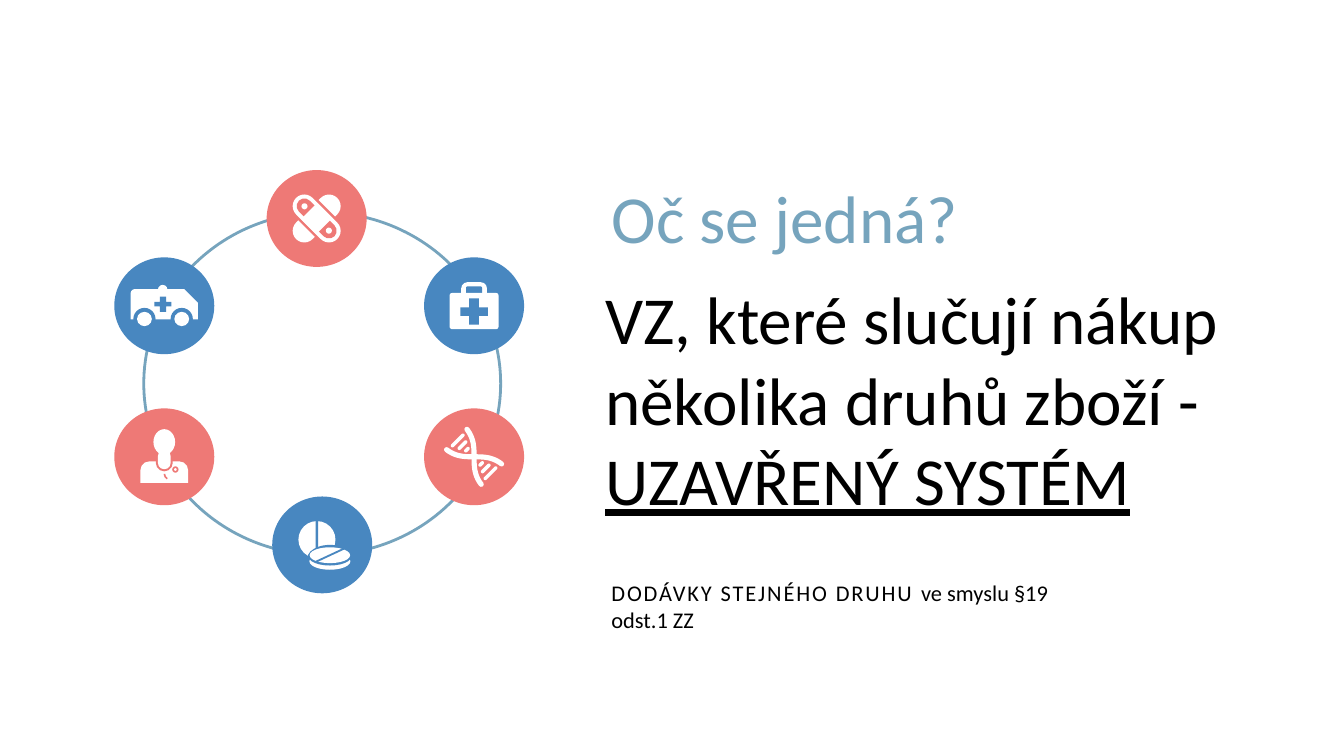
"""Build a slide with a ring of six medical icons beside a title and two texts."""
from pptx import Presentation
from pptx import util as u
from pptx.dml.color import RGBColor
from pptx.enum import shapes, text

STEEL = RGBColor(0x76, 0xA4, 0xBD)
BLUE = RGBColor(0x48, 0x87, 0xC0)
CORAL = RGBColor(0xEE, 0x79, 0x76)
WHITE = RGBColor(0xFF, 0xFF, 0xFF)
BLACK = RGBColor(0, 0, 0)
FONT = "Calibri"

OVAL = shapes.MSO_SHAPE.OVAL
BAR = shapes.MSO_SHAPE.RECTANGLE
ROUNDED = shapes.MSO_SHAPE.ROUNDED_RECTANGLE
CROSS = shapes.MSO_SHAPE.CROSS
VAN = shapes.MSO_SHAPE.SNIP_ROUND_RECTANGLE
SHOULDERS = shapes.MSO_SHAPE.ROUND_2_SAME_RECTANGLE
HALF_RING = shapes.MSO_SHAPE.BLOCK_ARC

deck = Presentation()
deck.slide_width, deck.slide_height = u.Cm(50.8), u.Cm(28.58)
page = deck.slides.add_slide(deck.slide_layouts[5])


def add_part(kind, center, offset, size, color, rotation=0, adjust=()):
    """Add a filled shape whose middle lies at an offset from an icon's center, in cm."""
    x, y = center[0] + offset[0], center[1] + offset[1]
    width, height = size
    part = page.shapes.add_shape(
        kind, u.Cm(x - width / 2), u.Cm(y - height / 2), u.Cm(width), u.Cm(height))
    part.shadow.inherit = False
    part.fill.solid()
    part.fill.fore_color.rgb = color
    part.line.fill.background()
    part.rotation = rotation
    for index, value in enumerate(adjust):
        part.adjustments[index] = value
    return part


def write(box, lines, size, color):
    """Fill a text box with left-aligned lines, one paragraph each."""
    frame = box.text_frame
    frame.word_wrap = True
    frame.auto_size = text.MSO_AUTO_SIZE.NONE
    frame.vertical_anchor = text.MSO_ANCHOR.TOP
    frame.text = "\n".join(lines)
    for paragraph in frame.paragraphs:
        paragraph.alignment = text.PP_ALIGN.LEFT
        paragraph.font.name, paragraph.font.size = FONT, u.Pt(size)
        paragraph.font.color.rgb = color
    return frame


title = page.shapes.title
title.left, title.top, title.width, title.height = u.Cm(22.86), u.Cm(6.55), u.Cm(13.74), u.Cm(3.33)
write(title, ["Oč se jedná?"], 72, STEEL).word_wrap = False

note = page.shapes.add_textbox(u.Cm(22.86), u.Cm(21.77), u.Cm(19.05), u.Cm(2.31))
note_line = write(note, ["DODÁVKY STEJNÉHO DRUHU "], 24, BLACK).paragraphs[0]
note_line.runs[0].font._element.set("spc", "200")
note_line.add_run().text = "ve smyslu §19 odst.1 ZZ"

body = page.shapes.add_textbox(u.Cm(22.63), u.Cm(10.36), u.Cm(23.77), u.Cm(12.57))
body_lines = ["VZ, které slučují nákup", "několika druhů zboží -", "UZAVŘENÝ SYSTÉM"]
body_frame = write(body, body_lines, 72, BLACK)
body_frame.paragraphs[-1].runs[0].font.underline = True

MIDDLE = (0, 0)
ring = add_part(OVAL, (12.18, 14.5), MIDDLE, (13.49, 12.95), WHITE)
ring.fill.background()
ring.line.color.rgb, ring.line.width = STEEL, u.Pt(3)

left_column, right_column = 6.21, 17.92
upper_row, lower_row = 11.56, 17.27
plaster = (11.97, 8.26)
pills = (12.18, 20.6)
ambulance = (left_column, upper_row)
aid_kit = (right_column, upper_row)
doctor = (left_column, lower_row)
helix = (right_column, lower_row)

discs = [(pills, BLUE), (aid_kit, BLUE), (ambulance, BLUE),
         (plaster, CORAL), (helix, CORAL), (doctor, CORAL)]
for center, color in discs:
    add_part(OVAL, center, MIDDLE, (3.78, 3.66), color)

add_part(OVAL, pills, (-0.2, -0.2), (1.4, 1.4), WHITE)
add_part(BAR, pills, (-0.2, -0.2), (0.1, 1.5), BLUE)
tablet_layers = [(0.5, 1.7, 1, BLUE), (0.62, 1.55, 0.64, WHITE),
                 (0.45, 1.6, 0.66, BLUE), (0.39, 1.53, 0.6, WHITE)]
for drop, width, height, color in tablet_layers:
    add_part(OVAL, pills, (0.29, drop), (width, height), color)
add_part(BAR, pills, (0.29, 0.39), (1.2, 0.07), BLUE, rotation=-25)

add_part(ROUNDED, aid_kit, (0, -0.51), (0.97, 0.76), WHITE, adjust=[0.3])
add_part(ROUNDED, aid_kit, (0, -0.56), (0.61, 0.35), BLUE, adjust=[0.2])
add_part(ROUNDED, aid_kit, (0, 0.2), (1.85, 1.37), WHITE, adjust=[0.07])
add_part(CROSS, aid_kit, (0, 0.22), (1.04, 0.99), BLUE, adjust=[0.34])

add_part(OVAL, ambulance, (-0.06, -0.61), (0.36, 0.36), WHITE)
add_part(VAN, ambulance, (0, -0.06), (2.54, 1.14), WHITE, adjust=[0.13, 0.45])
add_part(CROSS, ambulance, (-0.05, -0.06), (0.64, 0.58), BLUE, adjust=[0.35])
for axle in (-0.75, 0.66):
    add_part(OVAL, ambulance, (axle, 0.5), (0.84, 0.84), BLUE)
    add_part(OVAL, ambulance, (axle, 0.5), (0.56, 0.54), WHITE)

strip_layers = [(-45, 2.2, 0.88, WHITE), (45, 2.3, 1.08, CORAL),
                (45, 2.2, 0.88, WHITE), (45, 1.9, 0.58, CORAL)]
for rotation, length, width, color in strip_layers:
    add_part(ROUNDED, plaster, MIDDLE, (length, width), color, rotation, [0.5])
add_part(BAR, plaster, MIDDLE, (0.81, 0.86), WHITE, rotation=45)
for shift in (-0.46, 0.46):
    add_part(OVAL, plaster, (shift, shift), (0.23, 0.23), WHITE)

bend = 0.24
steps = [step / 10 * 1.04 for step in range(-10, 11)]
falling_strand = [(step, bend * step ** 3) for step in steps]
rising_strand = [(y, x) for x, y in falling_strand]
for strand in (falling_strand, rising_strand):
    points = [(u.Cm(helix[0] + x), u.Cm(helix[1] + y)) for x, y in strand]
    builder = page.shapes.build_freeform(*points[0])
    builder.add_line_segments(points[1:], close=False)
    curve = builder.convert_to_shape()
    curve.shadow.inherit = False
    curve.fill.background()
    curve.line.color.rgb, curve.line.width = WHITE, u.Pt(5.5)
    curve.line._get_or_add_ln().set("cap", "rnd")
for distance, length in ((0.27, 0.25), (0.44, 0.47), (0.62, 0.69)):
    for side in (-1, 1):
        shift = side * distance
        add_part(ROUNDED, helix, (shift, shift), (length, 0.13), WHITE, -45, [0.5])

add_part(SHOULDERS, doctor, (0, 0.58), (1.8, 0.81), WHITE, adjust=[0.4, 0])
add_part(ROUNDED, doctor, (0, 0.1), (0.64, 0.9), CORAL, adjust=[0.5])
add_part(ROUNDED, doctor, (0, 0.1), (0.48, 0.74), WHITE, adjust=[0.5])
add_part(OVAL, doctor, (0, -0.56), (0.82, 0.97), WHITE)
add_part(HALF_RING, doctor, (0.22, 0.64), (0.5, 0.5), CORAL, 180, [180, 0, 0.13])
add_part(OVAL, doctor, (0.42, 0.48), (0.24, 0.24), CORAL)
add_part(OVAL, doctor, (0.42, 0.48), (0.1, 0.1), WHITE)

deck.save("out.pptx")
